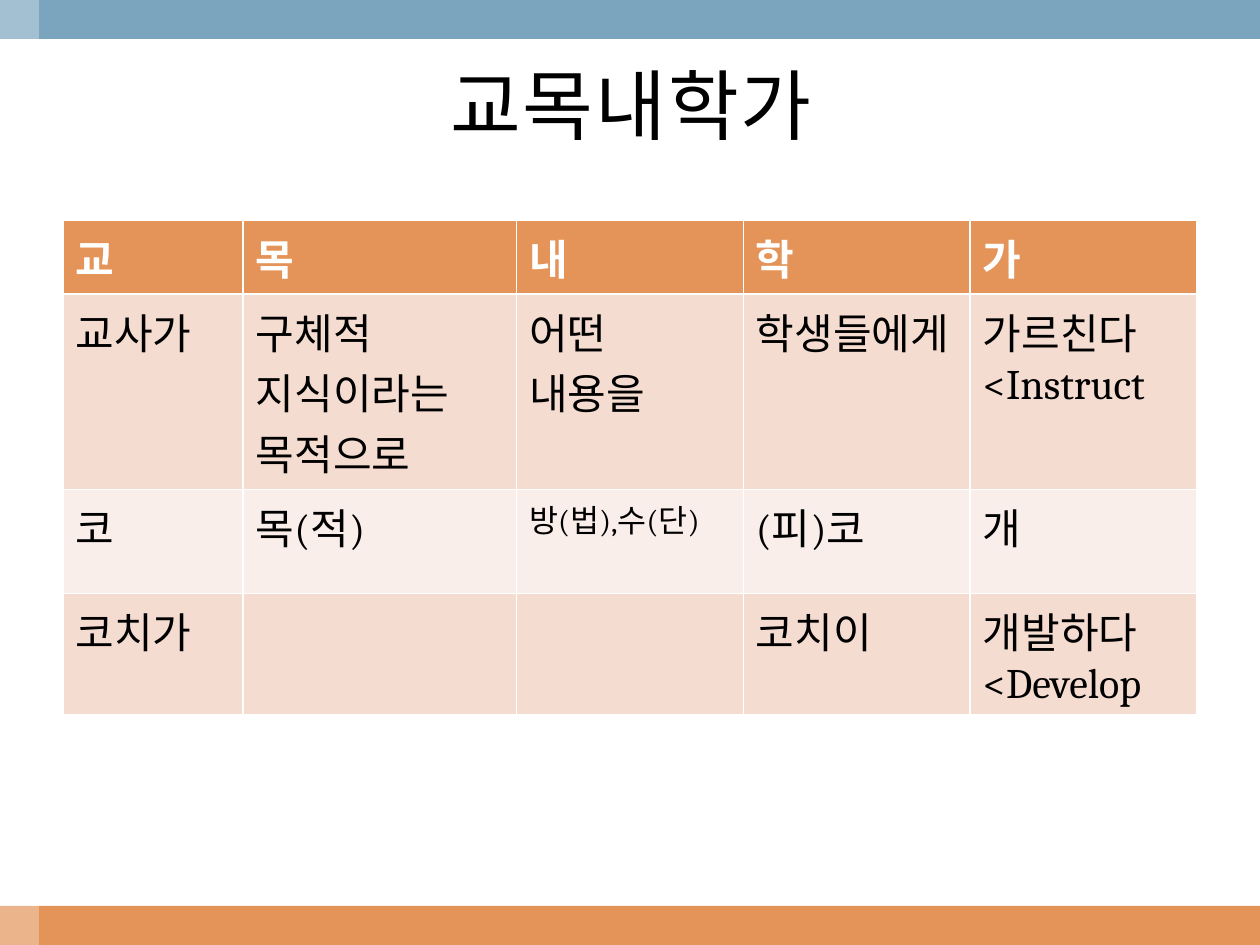
from pptx import Presentation
from pptx.dml.color import RGBColor
from pptx.enum.shapes import MSO_SHAPE
from pptx.enum.text import MSO_ANCHOR, PP_ALIGN
from pptx.oxml.ns import qn
from pptx.util import Inches, Pt
from lxml import etree

RECT = MSO_SHAPE.RECTANGLE
MIDDLE, CENTER = MSO_ANCHOR.MIDDLE, PP_ALIGN.CENTER

ORANGE = RGBColor(0xE4, 0x94, 0x58)
BLUE = RGBColor(0x7B, 0xA5, 0xBE)
PEACH = RGBColor(0xF5, 0xDC, 0xD1)
PALE = RGBColor(0xFA, 0xEE, 0xEA)
WHITE = RGBColor(0xFF, 0xFF, 0xFF)
BLACK = RGBColor(0, 0, 0)

FONT = "Cambria"
WIDTH, HEIGHT, BAND = 10, 7.5, 0.31
COLUMNS = [1.43, 2.17, 1.8, 1.8, 1.8]
ROW_HEIGHT = 0.41
ROWS = [
    ["교", "목", "내", "학", "가"],
    ["교사가", "구체적\n지식이라는\n목적으로", "어떤 내용을", "학생들에게",
     "가르친다\n<Instruct"],
    ["코", "목(적)", "방(법),수(단)", "(피)코", "개"],
    ["코치가", "", "", "코치이", "개발하다\n<Develop"],
]
SMALL_CELL = (2, 2)


def format_text(tf, size, color, bold=False):
    for p in tf.paragraphs:
        for r in p.runs:
            r.font.name = FONT
            r.font.size = Pt(size)
            r.font.bold = bold
            r.font.color.rgb = color


def add_band(slide, box, color, opacity=100):
    sp = slide.shapes.add_shape(RECT, *map(Inches, box))
    sp.shadow.inherit = False
    sp.line.fill.background()
    sp.fill.solid()
    sp.fill.fore_color.rgb = color
    if opacity < 100:
        clr = sp.fill._xPr.find(qn("a:solidFill"))[0]
        etree.SubElement(clr, qn("a:alpha")).set("val", str(opacity * 1000))


def add_frame(slide):
    add_band(slide, (0, HEIGHT - BAND, WIDTH, BAND), ORANGE)
    add_band(slide, (0, 0, WIDTH, BAND), BLUE)
    add_band(slide, (0, 0, BAND, HEIGHT), WHITE, opacity=30)


def fill_title(title, text, box):
    title.left, title.top, title.width, title.height = map(Inches, box)
    tf = title.text_frame
    tf.text = text
    tf.vertical_anchor = MIDDLE
    p = tf.paragraphs[0]
    p.alignment = CENTER
    format_text(tf, 44, BLACK)
    p.runs[0].font._element.set("spc", "100")


def add_grid(slide, left, top):
    # The default table style draws the white rules and the heavier header rule
    frame = slide.shapes.add_table(
        len(ROWS), len(COLUMNS), Inches(left), Inches(top),
        Inches(sum(COLUMNS)), Inches(ROW_HEIGHT * len(ROWS)))
    table = frame.table
    for column, width in zip(table.columns, COLUMNS):
        column.width = Inches(width)
    for i, row in enumerate(ROWS):
        header = i == 0
        fill = ORANGE if header else PEACH if i % 2 else PALE
        for j, text in enumerate(row):
            cell = table.cell(i, j)
            cell.fill.solid()
            cell.fill.fore_color.rgb = fill
            cell.text = text
            size = 18 if (i, j) == SMALL_CELL else 24
            format_text(cell.text_frame, size, WHITE if header else BLACK, header)


def main():
    prs = Presentation()
    prs.slide_width, prs.slide_height = Inches(WIDTH), Inches(HEIGHT)
    slide = prs.slides.add_slide(prs.slide_layouts[5])
    add_frame(slide)
    fill_title(slide.shapes.title, "교목내학가", (0.33, BAND, 9.36, 1.03))
    add_grid(slide, 0.5, 1.75)
    prs.save("out.pptx")


if __name__ == "__main__":
    main()
